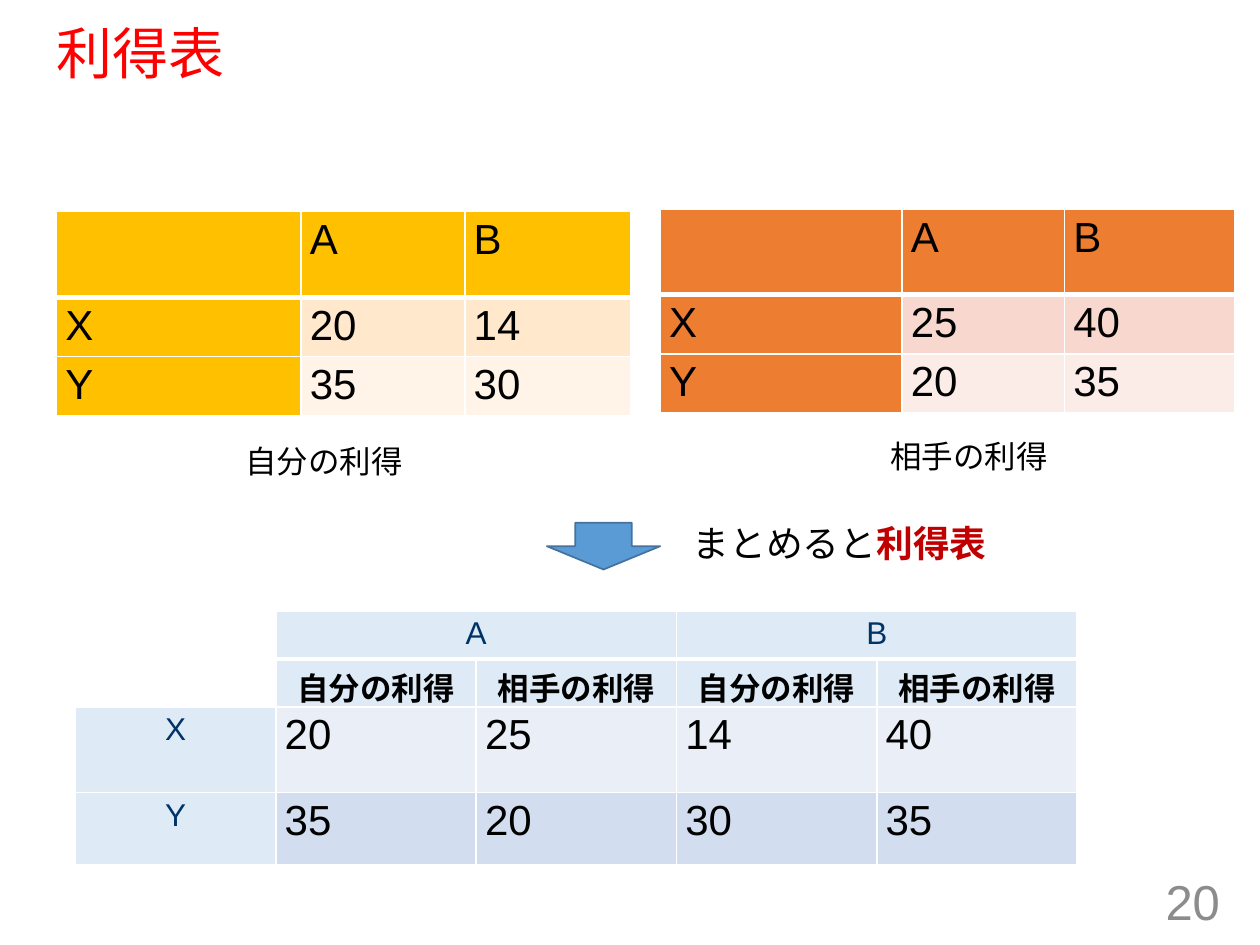
from lxml import etree
from pptx import Presentation, util as u
from pptx.dml.color import RGBColor
from pptx.enum import shapes, text
from pptx.oxml.ns import qn

CENTER, RIGHT = text.PP_ALIGN.CENTER, text.PP_ALIGN.RIGHT
BLACK, NAVY, WHITE = "000000", "003366", "FFFFFF"


def color(value):
    return RGBColor.from_string(value)


class SlideBuilder:
    font_name = "Arial"

    def __init__(self, slide):
        self.slide = slide

    def style(self, font, size, value, bold=False):
        font.name, font.size, font.bold = self.font_name, u.Pt(size), bold
        font.color.rgb = color(value)

    def place(self, shape, box):
        shape.left, shape.top, shape.width, shape.height = map(u.Inches, box)

    def title(self, words, box):
        shape = self.slide.shapes.title
        self.place(shape, box)
        frame = shape.text_frame
        frame.text = words
        frame.vertical_anchor = text.MSO_ANCHOR.MIDDLE
        paragraph = frame.paragraphs[0]
        paragraph.alignment = text.PP_ALIGN.LEFT
        paragraph.line_spacing = 0.9
        self.style(paragraph.font, 32, "FF0000")

    def label(self, words, box, size, value=BLACK, align=None, wrap=False, strong=""):
        shape = self.slide.shapes.add_textbox(*map(u.Inches, box))
        frame = shape.text_frame
        frame.word_wrap = wrap
        paragraph = frame.paragraphs[0]
        paragraph.alignment = align
        run = paragraph.add_run()
        run.text = words
        if strong:
            self.style(run.font, size, value)
            run = paragraph.add_run()
            run.text = strong
            self.style(run.font, size, "C00000", True)
        else:
            self.style(paragraph.font, size, value)
        return frame

    def down_arrow(self, box):
        shape = self.slide.shapes.add_shape(
            shapes.MSO_SHAPE.DOWN_ARROW, *map(u.Inches, box))
        shape.shadow.inherit = False
        shape.fill.solid()
        shape.fill.fore_color.rgb = color("5B9BD5")
        shape.line.color.rgb = color("43739E")
        shape.line.width = u.Pt(1)

    def borders(self, cell, bottom):
        properties = cell._tc.get_or_add_tcPr()
        widths = {"a:lnL": 1, "a:lnR": 1, "a:lnT": 1, "a:lnB": bottom}
        for index, (tag, width) in enumerate(widths.items()):
            line = etree.Element(qn(tag), w=str(u.Pt(width)))
            fill = etree.SubElement(line, qn("a:solidFill"))
            etree.SubElement(fill, qn("a:srgbClr"), val=WHITE)
            properties.insert(index, line)

    def table(self, rows, left, top, widths, heights, look):
        """look(row, column) gives fill, size, text colour, bold, alignment."""
        box = left, top, sum(widths), sum(heights)
        table = self.slide.shapes.add_table(
            len(rows), len(widths), *map(u.Inches, box)).table
        for column, width in zip(table.columns, widths):
            column.width = u.Inches(width)
        for r, (row, height) in enumerate(zip(rows, heights)):
            table.rows[r].height = u.Inches(height)
            for c, words in enumerate(row):
                cell = table.cell(r, c)
                fill, size, value, bold, align = look(r, c)
                cell.text = words
                cell.margin_left = cell.margin_right = u.Inches(0.07)
                cell.margin_top = cell.margin_bottom = u.Inches(0.04)
                cell.fill.solid()
                cell.fill.fore_color.rgb = color(fill)
                self.borders(cell, 3 if r == 0 else 1)
                paragraph = cell.text_frame.paragraphs[0]
                paragraph.alignment = align
                self.style(paragraph.font, size, value, bold)
        return table

    def payoff_table(self, values, left, top, widths, header, bands):
        rows = [["", "A", "B"], ["X", *values[0]], ["Y", *values[1]]]

        def look(r, c):
            fill = header if r == 0 or c == 0 else bands[r - 1]
            return fill, 24, BLACK, False, None

        self.table(rows, left, top, widths, [0.68, 0.47, 0.47], look)


def combined_look(r, c):
    if r < 2 and c == 0:
        return WHITE, 18, BLACK, False, None
    if r == 1:
        return "DEEBF7", 18, BLACK, True, CENTER
    if r == 0 or c == 0:
        return "DEEBF7", 18, NAVY, False, CENTER
    return ("EAEFF7" if r == 2 else "D2DEEF"), 24, BLACK, False, None


def main():
    presentation = Presentation()
    presentation.slide_width, presentation.slide_height = u.Inches(10), u.Inches(7.5)
    builder = SlideBuilder(presentation.slides.add_slide(presentation.slide_layouts[5]))
    builder.title("利得表", (0.35, 0.19, 9.25, 0.51))

    # Payoffs of each player
    mine, theirs = "自分の利得", "相手の利得"
    my_values = [["20", "14"], ["35", "30"]]
    their_values = [["25", "40"], ["20", "35"]]
    builder.payoff_table(my_values, 0.45, 1.68, [1.94, 1.3, 1.32],
                         "FFC000", ["FFE8CC", "FFF4E7"])
    builder.payoff_table(their_values, 5.24, 1.66, [1.92, 1.29, 1.35],
                         "ED7D31", ["F8D7CE", "FCECE8"])
    builder.label(mine, (1.85, 3.46, 1.46, 0.4), 18)
    builder.label(theirs, (6.96, 3.42, 1.46, 0.4), 18, align=CENTER)

    # Step to the combined table
    builder.down_arrow((4.34, 4.15, 0.9, 0.37))
    builder.label("まとめると", (5.4, 4.08, 2.56, 0.45), 21, strong="利得表")

    # Combined table: both payoffs side by side
    rows = [["", "A", "", "B", ""], ["", mine, theirs, mine, theirs]]
    for name, own, other in zip("XY", my_values, their_values):
        rows.append([name, own[0], other[0], own[1], other[1]])
    table = builder.table(rows, 0.6, 4.85, [1.59] * 5,
                          [0.38, 0.38, 0.68, 0.57], combined_look)
    for column in (1, 3):
        table.cell(0, column).merge(table.cell(0, column + 1))

    # Slide number
    number = builder.label("20", (7.53, 6.95, 2.25, 0.4), 28, "8C8C8C", RIGHT, True)
    number.vertical_anchor = text.MSO_ANCHOR.MIDDLE

    presentation.save("out.pptx")


if __name__ == "__main__":
    main()
